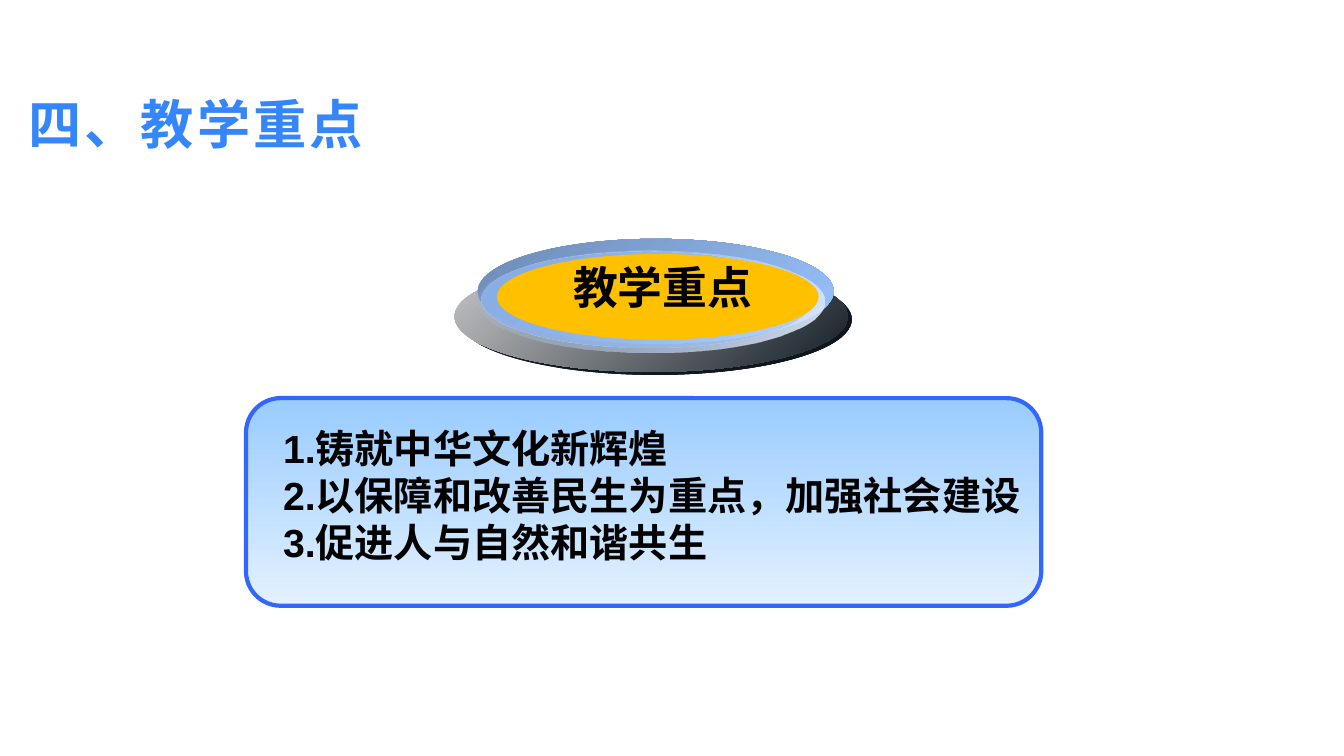
from lxml import etree
from pptx import Presentation
from pptx.dml.color import RGBColor
from pptx.enum.shapes import MSO_SHAPE
from pptx.enum.text import MSO_ANCHOR, PP_ALIGN
from pptx.oxml.ns import qn
from pptx.util import Pt

ELLIPSE, ROUND_RECT = MSO_SHAPE.OVAL, MSO_SHAPE.ROUNDED_RECTANGLE
TOP, BOTTOM = MSO_ANCHOR.TOP, MSO_ANCHOR.BOTTOM
LEFT, CENTER = PP_ALIGN.LEFT, PP_ALIGN.CENTER
CJK, LATIN = "Noto Sans CJK SC", "Arial"

# Left, top, width, height, then (colour, opacity in %) for each gradient stop
BADGE_RINGS = [
    (327.6, 188.6, 280.8, 79.2, ("141E26", 100), ("0F161C", 100)),
    (324.7, 186.5, 280.8, 79.2, ("C6C6C7", 100), ("141E26", 100)),
    (341.3, 170.6, 254.2, 74.9, ("6D8BB5", 100), ("99C2FD", 100)),
    (341.3, 179.3, 247.7, 72.7, ("99C2FD", 0), ("E2ECFE", 100)),
    (344.2, 180, 236.2, 68.4, ("8AAFE5", 100), ("99C2FD", 48)),
]
KEY_POINTS = [
    "1.铸就中华文化新辉煌",
    "2.以保障和改善民生为重点，加强社会建设",
    "3.促进人与自然和谐共生",
]


def rgb(color):
    return RGBColor.from_string(color)


def add_shape(s, kind, left, top, width, height):
    sp = s.shapes.add_shape(kind, Pt(left), Pt(top), Pt(width), Pt(height))
    sp.shadow.inherit = False
    sp.line.fill.background()
    return sp


def fill_gradient(sp, angle, *stops):
    """Fill with (colour, opacity) stops; the angle runs clockwise."""
    sp.fill.gradient()
    sp.fill.gradient_angle = 360 - angle
    for stop, (color, opacity) in zip(sp.fill.gradient_stops, stops):
        stop.color.rgb = rgb(color)
        if opacity < 100:
            clr = stop._gs.find(qn("a:srgbClr"))
            etree.SubElement(clr, qn("a:alpha"), val=str(opacity * 1000))


def add_text(s, box, lines, size, font, color="000000", align=LEFT,
             anchor=TOP, margins=(7.2, 3.6), spacing=0):
    """Add bold lines; margins are (side, top and bottom)."""
    tf = s.shapes.add_textbox(*map(Pt, box)).text_frame
    tf.word_wrap = True
    tf.vertical_anchor = anchor
    tf.margin_left = tf.margin_right = Pt(margins[0])
    tf.margin_top = tf.margin_bottom = Pt(margins[1])
    for i, line in enumerate(lines):
        p = tf.add_paragraph() if i else tf.paragraphs[0]
        p.alignment = align
        r = p.add_run()
        r.text = line
        p.font.size, p.font.bold, p.font.name = Pt(size), True, font
        p.font.color.rgb = rgb(color)
        rpr = r.font._element
        if spacing:
            rpr.set("spc", str(round(spacing * 100)))
        etree.SubElement(rpr, qn("a:ea"), typeface=font)


def add_panel(s):
    sp = add_shape(s, ROUND_RECT, 175.7, 284.4, 568.1, 148.3)
    sp.adjustments[0] = 0.167
    fill_gradient(sp, 90, ("99CCFF", 100), ("E3F1FF", 100))
    sp.line.color.rgb = rgb("3366FF")
    sp.line.width = Pt(3)


def add_badge(s):
    for *box, start, end in BADGE_RINGS:
        fill_gradient(add_shape(s, ELLIPSE, *box), 45, start, end)
    face = add_shape(s, ELLIPSE, 355, 181.4, 229.7, 61.2)
    face.fill.solid()
    face.fill.fore_color.rgb = rgb("FFC000")
    add_text(s, (357.1, 182.2, 232.6, 46.1), ["教学重点"], 32, CJK,
             align=CENTER)


def main():
    prs = Presentation()
    prs.slide_width, prs.slide_height = Pt(960), Pt(540)
    s = prs.slides.add_slide(prs.slide_layouts[6])
    add_panel(s)
    add_badge(s)
    add_text(s, (195.1, 299.5, 604.1, 143.3), KEY_POINTS, 28, LATIN)
    add_text(s, (15.1, 57.6, 458.6, 55.4), ["四、教学重点"], 38, CJK,
             "3586FB", anchor=BOTTOM, margins=(5, 2.2), spacing=2.2)
    prs.save("out.pptx")


if __name__ == "__main__":
    main()
